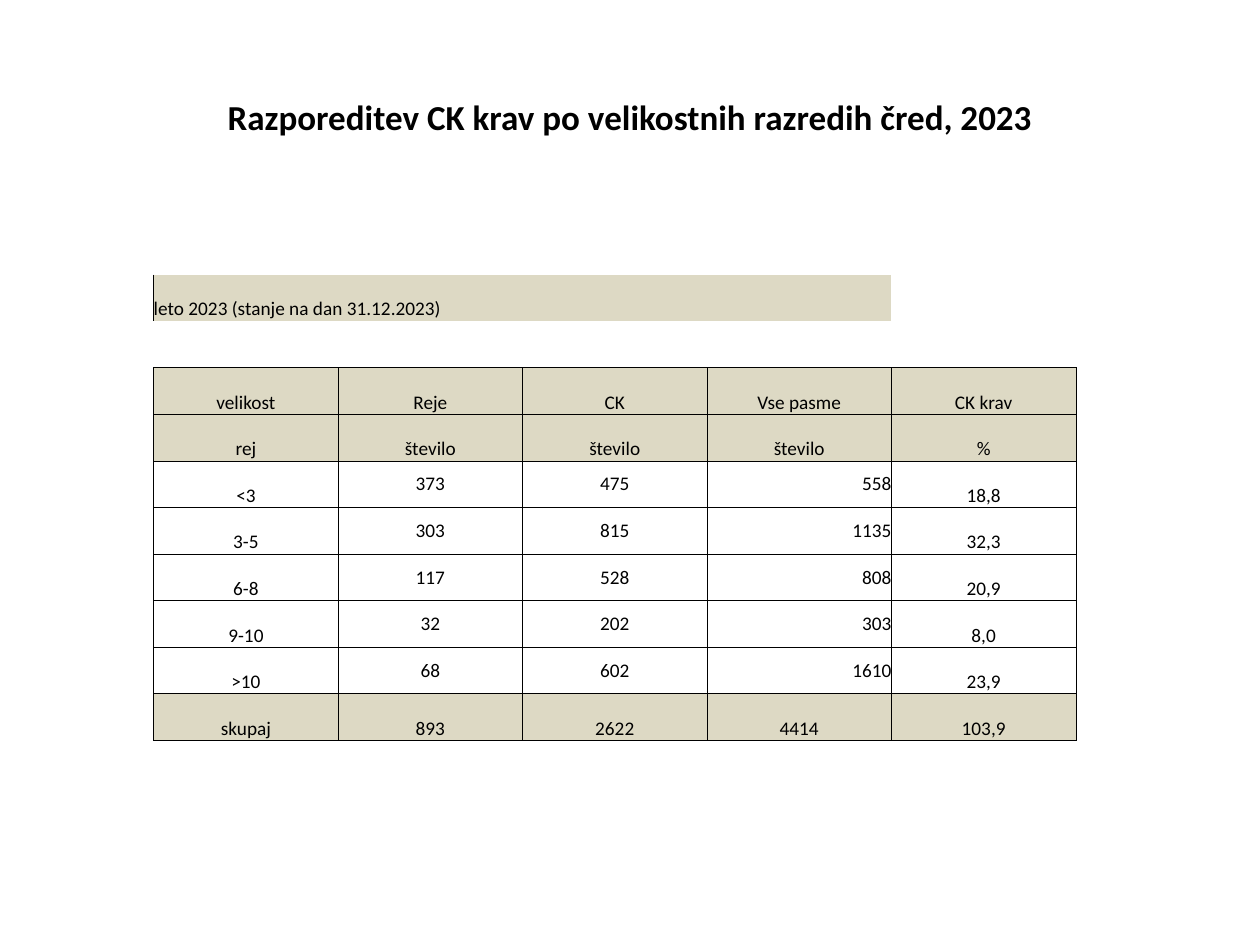
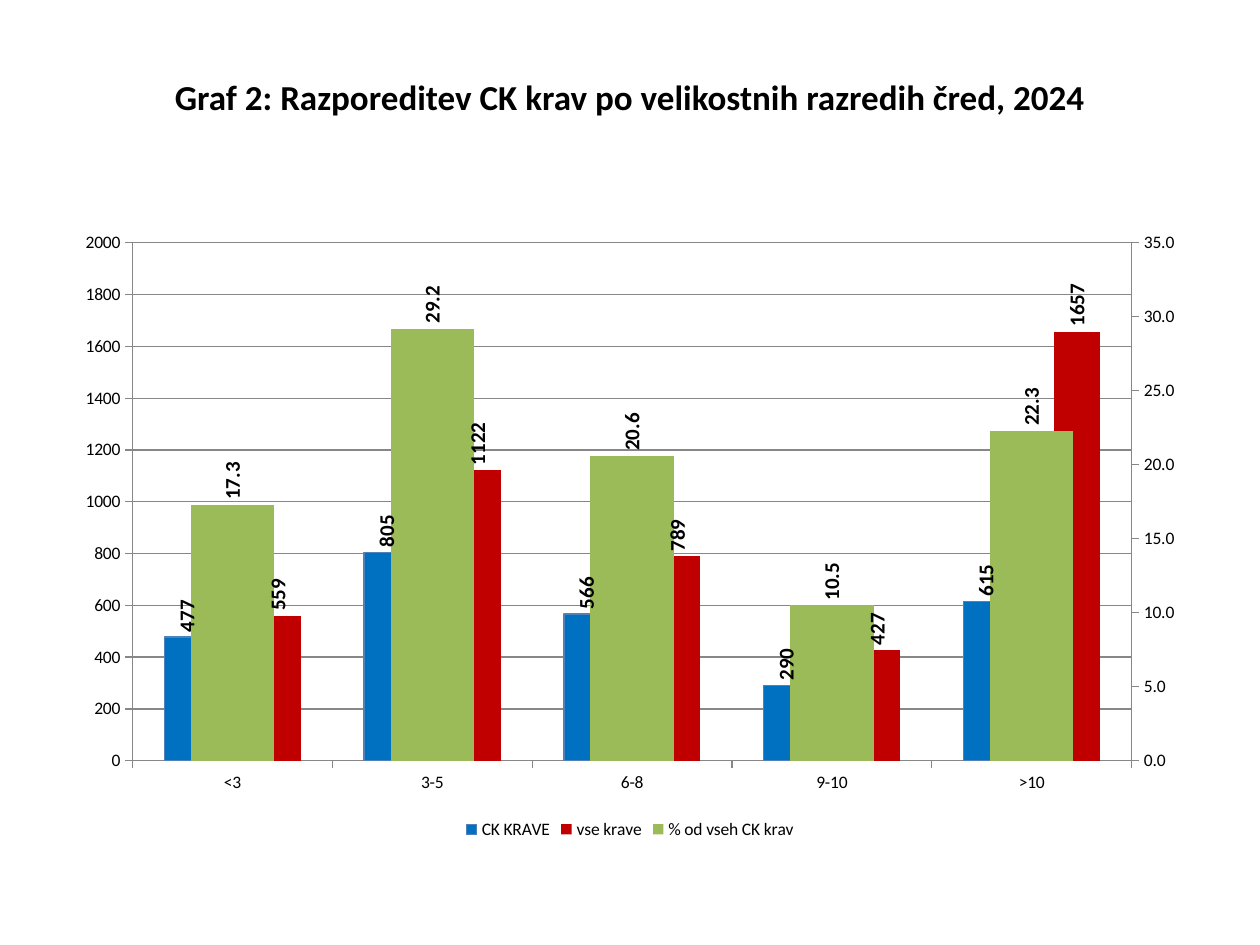
from copy import deepcopy
from dataclasses import dataclass
from typing import Optional

from lxml import etree
from pptx import Presentation
from pptx.chart.data import CategoryChartData
from pptx.dml.color import RGBColor
from pptx.enum import chart as ch, text
from pptx.oxml import ns
from pptx.util import Inches, Pt

FONT = "Calibri"
BLACK = RGBColor(0x00, 0x00, 0x00)
BEIGE = RGBColor(0xDD, 0xD9, 0xC4)
GREY = RGBColor(0x87, 0x87, 0x87)
BLUE = RGBColor(0x00, 0x70, 0xC0)
BLUE_EDGE = RGBColor(0x4F, 0x81, 0xBD)
RED = RGBColor(0xC0, 0x00, 0x00)
GREEN = RGBColor(0x9B, 0xBB, 0x59)

CLASSES = ["<3", "3-5", "6-8", "9-10", ">10"]
PERIOD = "leto 2023 (stanje na dan 31.12.2023)"
HEADER = [
    ["velikost", "Reje", "CK", "Vse pasme", "CK krav"],
    ["rej", "število", "število", "število", "%"],
]
HERDS = [
    ["373", "475", "558", "18,8"],
    ["303", "815", "1135", "32,3"],
    ["117", "528", "808", "20,9"],
    ["32", "202", "303", "8,0"],
    ["68", "602", "1610", "23,9"],
]
TOTAL = ["skupaj", "893", "2622", "4414", "103,9"]


@dataclass
class Title:
    wording: str
    height: float


@dataclass
class Bars:
    name: str
    values: list[float]
    color: RGBColor
    number_format: str = "General"
    edge: Optional[RGBColor] = None


TABLE_TITLE = Title("Razporeditev CK krav po velikostnih razredih čred, 2023", 1.25)
CHART_TITLE = Title("Graf 2: Razporeditev CK krav po velikostnih razredih čred, 2024", 0.93)
BARS = [
    Bars("CK KRAVE", [477, 805, 566, 290, 615], BLUE, edge=BLUE_EDGE),
    Bars("vse krave", [559, 1122, 789, 427, 1657], RED),
    Bars("% od vseh CK krav", [17.3, 29.2, 20.6, 10.5, 22.3], GREEN, "0.0"),
]


def style_font(font, size: float, bold: bool = False) -> None:
    font.name = FONT
    font.size = Pt(size)
    font.bold = bold
    font.color.rgb = BLACK


def add_titled_slide(prs, title: Title):
    slide = prs.slides.add_slide(prs.slide_layouts[6])
    sp = slide.shapes.add_textbox(Inches(0.5), Inches(0.3), Inches(9), Inches(title.height))
    tf = sp.text_frame
    tf.word_wrap = True
    tf.vertical_anchor = text.MSO_ANCHOR.MIDDLE
    p = tf.paragraphs[0]
    p.text = title.wording
    p.alignment = text.PP_ALIGN.CENTER
    style_font(p.font, 20, bold=True)
    return slide


def set_borders(cell, sides: str) -> None:
    tc_pr = cell._tc.get_or_add_tcPr()
    for side in "LRTB":
        ln = etree.SubElement(tc_pr, ns.qn(f"a:ln{side}"), w=str(Pt(0.5)))
        if side in sides:
            fill = etree.SubElement(ln, ns.qn("a:solidFill"))
            etree.SubElement(fill, ns.qn("a:srgbClr"), val=str(BLACK))
        else:
            etree.SubElement(ln, ns.qn("a:noFill"))


def style_cell(cell, wording: str, shaded: bool, sides: str, align, anchor) -> None:
    set_borders(cell, sides)
    if shaded:
        cell.fill.solid()
        cell.fill.fore_color.rgb = BEIGE
    else:
        cell.fill.background()
    cell.margin_left = cell.margin_right = cell.margin_top = cell.margin_bottom = 0
    cell.vertical_anchor = anchor
    p = cell.text_frame.paragraphs[0]
    p.text = wording
    p.alignment = align
    style_font(p.font, 11)


def add_herd_table(slide) -> None:
    herd_rows = [[size, *counts] for size, counts in zip(CLASSES, HERDS)]
    rows = [[PERIOD] + [""] * 4, [""] * 5, *HEADER, *herd_rows, TOTAL]
    frame = slide.shapes.add_table(
        len(rows), 5, Inches(1.22), Inches(2.18), Inches(7.32), Inches(3.7)
    )
    table = frame.table
    table.first_row = table.horz_banding = False
    first_herd = 2 + len(HEADER)
    last_row = len(rows) - 1
    for i, row in enumerate(rows):
        for j, wording in enumerate(row):
            is_count = first_herd <= i < last_row and 1 <= j <= 3
            align = text.PP_ALIGN.CENTER
            if i == 0:
                align = text.PP_ALIGN.LEFT
                shaded, sides = j < 4, "L" if j == 0 else ""
            elif i == 1:
                shaded, sides = False, "B"
            else:
                shaded, sides = i < first_herd or i == last_row, "LRTB"
            if is_count and j == 3:
                align = text.PP_ALIGN.RIGHT
            anchor = text.MSO_ANCHOR.MIDDLE if is_count else text.MSO_ANCHOR.BOTTOM
            style_cell(table.cell(i, j), wording, shaded, sides, align, anchor)
    table.cell(0, 0).merge(table.cell(0, 3))


def style_bars(series, bars: Bars) -> None:
    series.format.fill.solid()
    series.format.fill.fore_color.rgb = bars.color
    if bars.edge is None:
        series.format.line.fill.background()
    else:
        series.format.line.color.rgb = bars.edge
        series.format.line.width = Pt(0.75)
    labels = series.data_labels
    labels.show_value = True
    labels.position = ch.XL_LABEL_POSITION.OUTSIDE_END
    labels.number_format = bars.number_format
    labels.number_format_is_linked = False
    style_font(labels.font, 12, bold=True)
    body = labels._element.find(".//" + ns.qn("a:bodyPr"))
    body.set("rot", "-5400000")
    body.set("vert", "horz")


def move_last_series_right(chart) -> None:
    plot_area = chart._chartSpace.chart.plotArea
    left_plot = plot_area.find(ns.qn("c:barChart"))
    cat_axis = plot_area.find(ns.qn("c:catAx"))
    val_axis = plot_area.find(ns.qn("c:valAx"))
    right_plot, right_cat, right_val = map(deepcopy, (left_plot, cat_axis, val_axis))
    left_plot.remove(left_plot.findall(ns.qn("c:ser"))[-1])
    for ser in right_plot.findall(ns.qn("c:ser"))[:-1]:
        right_plot.remove(ser)
    left_plot.addnext(right_plot)
    val_axis.addnext(right_val)
    right_val.addnext(right_cat)

    cat_id, val_id = "50010", "50020"
    for node, value in zip(right_plot.findall(ns.qn("c:axId")), (cat_id, val_id)):
        node.set("val", value)
    for axis, own, other in ((right_cat, cat_id, val_id), (right_val, val_id, cat_id)):
        axis.find(ns.qn("c:axId")).set("val", own)
        axis.find(ns.qn("c:crossAx")).set("val", other)
    right_cat.find(ns.qn("c:delete")).set("val", "1")
    right_val.find(ns.qn("c:axPos")).set("val", "r")
    right_val.find(ns.qn("c:crosses")).set("val", "max")
    right_val.find(ns.qn("c:numFmt")).set("formatCode", "0.0")


def add_herd_chart(slide) -> None:
    data = CategoryChartData()
    data.categories = CLASSES
    for bars in BARS:
        data.add_series(bars.name, bars.values, bars.number_format)
    chart = slide.shapes.add_chart(
        ch.XL_CHART_TYPE.COLUMN_CLUSTERED,
        Inches(0.5), Inches(1.75), Inches(9), Inches(4.95), data,
    ).chart
    style_font(chart.font, 10)
    chart.has_title = False
    chart.has_legend = True
    chart.legend.position = ch.XL_LEGEND_POSITION.BOTTOM
    chart.legend.include_in_layout = False

    plot = chart.plots[0]
    plot.vary_by_categories = False
    plot.gap_width = 139
    plot.overlap = -100
    for series, bars in zip(plot.series, BARS):
        style_bars(series, bars)

    left = chart.value_axis
    for axis in (chart.category_axis, left):
        axis.has_major_gridlines = False
        axis.major_tick_mark = ch.XL_TICK_MARK.OUTSIDE
        axis.minor_tick_mark = ch.XL_TICK_MARK.NONE
        axis.format.line.color.rgb = GREY
        axis.format.line.width = Pt(0.75)
        axis.tick_labels.number_format = "General"
        axis.tick_labels.number_format_is_linked = False
    move_last_series_right(chart)

    left.maximum_scale = 2000
    left.has_major_gridlines = True
    left.major_gridlines.format.line.color.rgb = GREY
    left.major_gridlines.format.line.width = Pt(0.75)


def main() -> None:
    prs = Presentation()
    prs.slide_width, prs.slide_height = Inches(10), Inches(7.5)
    add_herd_table(add_titled_slide(prs, TABLE_TITLE))
    add_herd_chart(add_titled_slide(prs, CHART_TITLE))
    prs.save("out.pptx")


if __name__ == "__main__":
    main()
